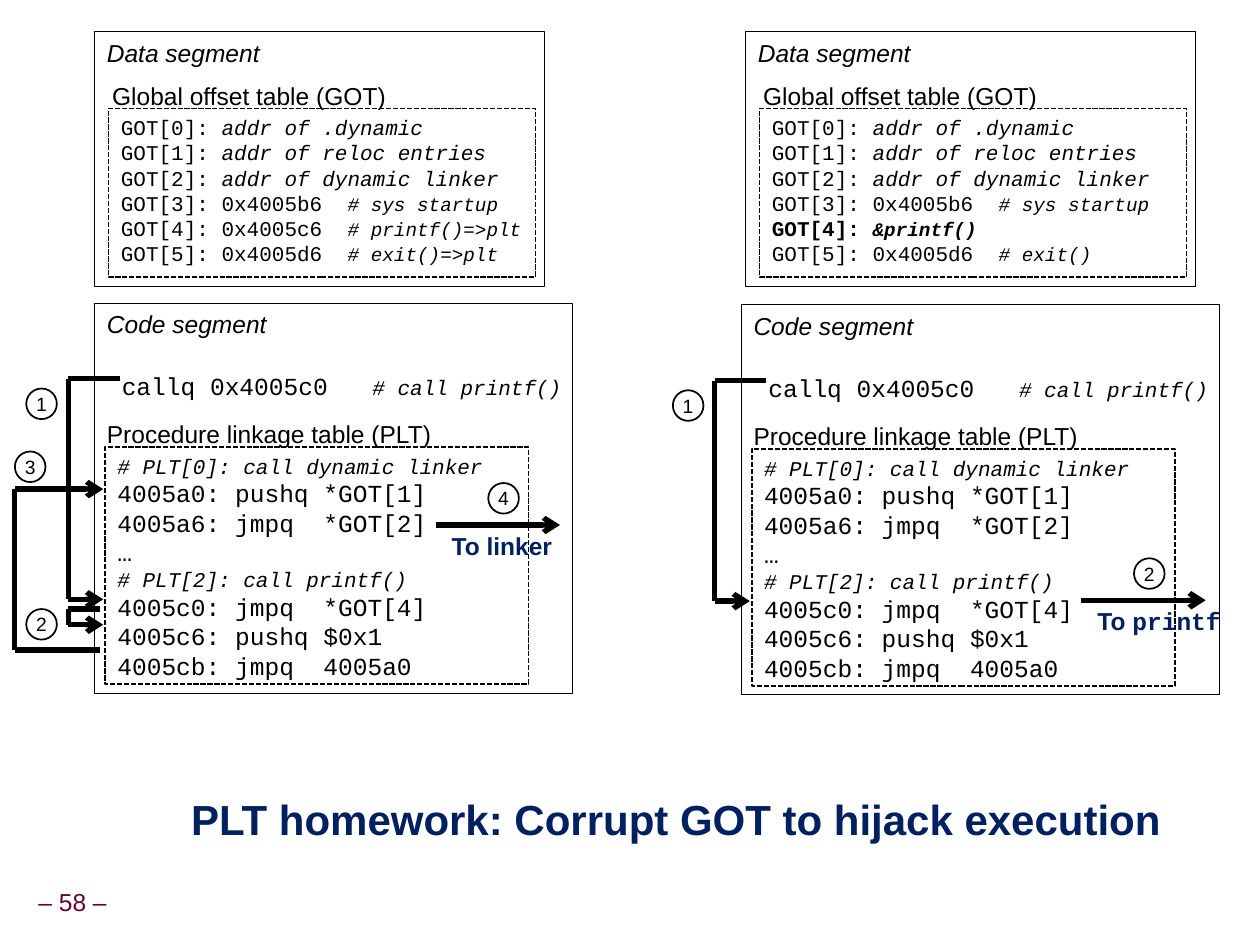
import pptx
import pptx.util
import pptx.dml.color
import pptx.enum.dml
import pptx.enum.shapes
import pptx.enum.text
import pptx.oxml.ns
import lxml.etree

Pt = pptx.util.Pt
SHAPE = pptx.enum.shapes.MSO_SHAPE
ALIGN = pptx.enum.text.PP_ALIGN
ANCHOR = pptx.enum.text.MSO_ANCHOR

COLORS = {"ink": "000000", "paper": "FFFFFF", "navy": "002060", "wine": "660033"}
SANS, MONO = "Arial", "Courier New"

TITLE = "PLT homework: Corrupt GOT to hijack execution"
PAGE = "– 58 –"

# A run is (text, size, style); style holds "b" and/or "i".
GOT_HEAD = [
    [("GOT[0]: ", 12, ""), ("addr of .dynamic", 12, "i")],
    [("GOT[1]: ", 12, ""), ("addr of reloc entries", 12, "i")],
    [("GOT[2]: ", 12, ""), ("addr of dynamic linker", 12, "i")],
    [("GOT[3]: 0x4005b6  ", 12, ""), ("# sys startup", 11, "i")],
]
GOT_LAZY = [
    [("GOT[4]: 0x4005c6  ", 12, ""), ("# printf()=>plt", 11, "i")],
    [("GOT[5]: 0x4005d6  ", 12, ""), ("# exit()=>plt", 11, "i")],
]
GOT_BOUND = [
    [("GOT[4]: ", 12, "b"), ("&printf()", 11, "bi")],
    [("GOT[5]: 0x4005d6  ", 12, ""), ("# exit()", 11, "i")],
]
CALL = [[("callq 0x4005c0   ", 14, ""), ("# call printf()", 12, "i")]]
PLT = [
    [("# PLT[0]: call dynamic linker", 12, "i")],
    [("4005a0: pushq *GOT[1]", 14, "")],
    [("4005a6: jmpq  *GOT[2]", 14, "")],
    [("…", 14, "")],
    [("# PLT[2]: call printf()", 12, "i")],
    [("4005c0: jmpq  *GOT[4]", 14, "")],
    [("4005c6: pushq $0x1", 14, "")],
    [("4005cb: jmpq  4005a0", 14, "")],
]

# Numbered jumps: badge corner, then the corners of the arrow's route.
JUMPS = {
    "1": ((15, 222), [(68.5, 216.5), (39, 216.5), (39, 342.5), (59, 342.5)]),
    "2": ((15, 348), [(57, 348), (39, 348), (39, 357), (59, 357)]),
    "3": ((8.5, 258), [(57, 371.5), (8.5, 371.5), (8.5, 279.5), (59, 279.5)]),
}
# Each side: shifts of its two segments, GOT tail, jumps, and the exit arrow.
SIDES = [
    {"data": 0, "code": (0, 0), "got": GOT_LAZY, "jumps": "123",
     "exit": ("4", 249, 300, [("To linker", SANS)])},
    {"data": 372, "code": (369.5, 1), "got": GOT_BOUND, "jumps": "1",
     "exit": ("2", 618, 343, [("To ", SANS), ("printf", MONO)])},
]


def tint(name):
    return pptx.dml.color.RGBColor.from_string(COLORS[name])


def add_run(para, text, size, style="", font=SANS, color="ink"):
    run = para.add_run()
    run.text = text
    run.font.name, run.font.size = font, Pt(size)
    run.font.bold, run.font.italic = "b" in style, "i" in style
    run.font.color.rgb = tint(color)


def add_label(slide, x, y, w, runs, h=24.5):
    """Add one line of text; each run holds the arguments of add_run."""
    box = slide.shapes.add_textbox(Pt(x), Pt(y), Pt(w), Pt(h))
    box.text_frame.word_wrap = False
    for run in runs:
        add_run(box.text_frame.paragraphs[0], *run)
    return box


def add_box(slide, x, y, w, h, kind=SHAPE.RECTANGLE, fill=None, width=1, dash=False):
    box = slide.shapes.add_shape(kind, Pt(x), Pt(y), Pt(w), Pt(h))
    box.shadow.inherit = False
    if fill:
        box.fill.solid()
        box.fill.fore_color.rgb = tint(fill)
    else:
        box.fill.background()
    box.line.color.rgb = tint("ink")
    box.line.width = Pt(width)
    if dash:
        box.line.dash_style = pptx.enum.dml.MSO_LINE.SQUARE_DOT
    return box


def write_code(box, lines, left=7.2, top=3.6):
    frame = box.text_frame
    frame.word_wrap, frame.vertical_anchor = True, ANCHOR.TOP
    frame.margin_left, frame.margin_top, frame.margin_right = Pt(left), Pt(top), 0
    for i, line in enumerate(lines):
        para = frame.add_paragraph() if i else frame.paragraphs[0]
        para.alignment = ALIGN.LEFT
        for text, size, style in line:
            add_run(para, text, size, style, MONO)


def add_badge(slide, x, y, text):
    badge = add_box(slide, x, y, 17.5, 17.5, SHAPE.OVAL)
    frame = badge.text_frame
    frame.word_wrap, frame.vertical_anchor = False, ANCHOR.MIDDLE
    frame.paragraphs[0].alignment = ALIGN.CENTER
    add_run(frame.paragraphs[0], text, 11)


def add_route(slide, points):
    """Join the points with thick lines; the last line gets an arrowhead."""
    qn = pptx.oxml.ns.qn
    for (x1, y1), (x2, y2) in zip(points, points[1:]):
        line = slide.shapes.add_connector(
            pptx.enum.shapes.MSO_CONNECTOR.STRAIGHT, Pt(x1), Pt(y1), Pt(x2), Pt(y2))
        line.line.color.rgb = tint("ink")
        line.line.width = Pt(3)
        props = line.element.spPr
        lxml.etree.SubElement(props, qn("a:effectLst"))
    lxml.etree.SubElement(props.find(qn("a:ln")), qn("a:tailEnd"), type="arrow")


def add_data(slide, dx, got):
    add_box(slide, 54 + dx, 18, 257, 145.5, fill="paper", width=0.25)
    write_code(add_box(slide, 62 + dx, 62, 244, 96.5, dash=True), got)
    add_label(slide, 57 + dx, 42.5, 171.5, [("Global offset table (GOT)", 14)])
    add_label(slide, 54 + dx, 18, 102, [("Data segment", 14, "i")])


def add_code(slide, dx, dy):
    segment = add_box(slide, 54 + dx, 173 + dy, 273, 223, fill="paper", width=0.25)
    write_code(segment, CALL, left=15.6, top=39)
    add_label(slide, 54 + dx, 173 + dy, 106, [("Code segment", 14, "i")])
    write_code(add_box(slide, 60 + dx, 255.5 + dy, 242, 135.5, dash=True), PLT)
    add_label(slide, 54 + dx, 236 + dy, 201, [("Procedure linkage table (PLT)", 14)])


def add_exit(slide, number, x, y, words):
    add_badge(slide, x + 30, y - 24, number)
    add_route(slide, [(x, y), (x + 71, y)])
    runs = [(text, 14, "b", font, "navy") for text, font in words]
    add_label(slide, x + 2, y, 72 if len(words) == 1 else 85, runs)


def add_title(slide):
    title = slide.shapes.title
    title.left, title.top, title.width, title.height = Pt(102), Pt(450), Pt(580), Pt(36)
    frame = title.text_frame
    frame.word_wrap, frame.vertical_anchor = False, ANCHOR.TOP
    frame.auto_size = pptx.enum.text.MSO_AUTO_SIZE.NONE
    frame.paragraphs[0].alignment = ALIGN.LEFT
    add_run(frame.paragraphs[0], TITLE, 24, "b", color="navy")


def main():
    deck = pptx.Presentation()
    deck.slide_width, deck.slide_height = Pt(720), Pt(540)
    slide = deck.slides.add_slide(deck.slide_layouts[5])
    add_title(slide)
    for side in SIDES:
        dx, dy = side["code"]
        add_data(slide, side["data"], GOT_HEAD + side["got"])
        add_code(slide, dx, dy)
        for number in side["jumps"]:
            (x, y), points = JUMPS[number]
            add_route(slide, [(px + dx, py + dy) for px, py in points])
            add_badge(slide, x + dx, y + dy, number)
        add_exit(slide, *side["exit"])
    page = add_label(slide, -6.5, 504, 96, [(PAGE, 14, "", SANS, "wine")], 22.5)
    page.text_frame.vertical_anchor = ANCHOR.MIDDLE
    page.text_frame.paragraphs[0].alignment = ALIGN.CENTER
    deck.save("out.pptx")


if __name__ == "__main__":
    main()
